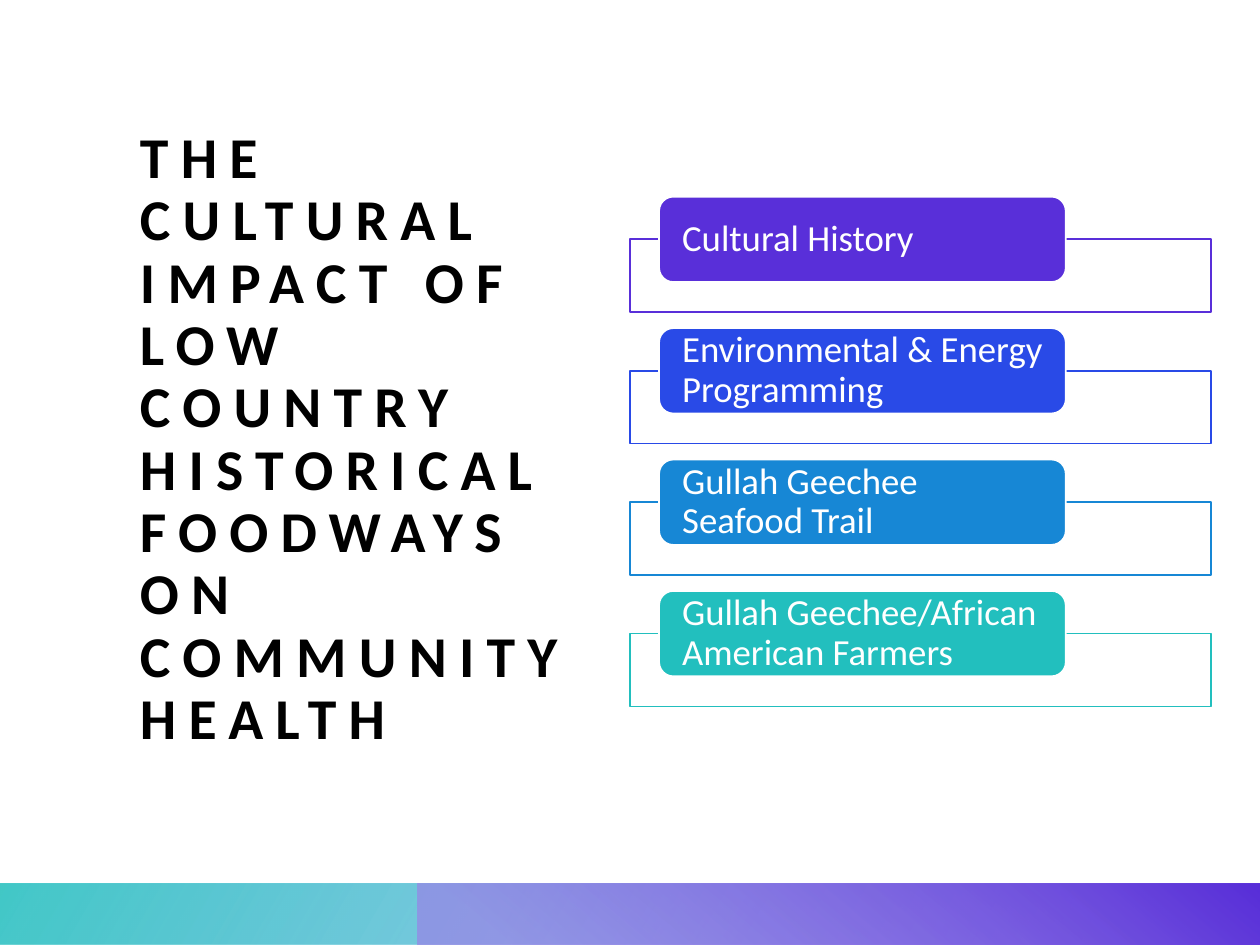
from lxml import etree
from pptx import Presentation
from pptx.dml.color import RGBColor
from pptx.enum import shapes, text
from pptx.oxml import ns
from pptx.util import Pt

BLACK = RGBColor(0x00, 0x00, 0x00)
WHITE = RGBColor(0xFF, 0xFF, 0xFF)
PURPLE = RGBColor(0x59, 0x2F, 0xD9)
LILAC = RGBColor(0x9B, 0x82, 0xE8)
INDIGO = RGBColor(0x29, 0x4A, 0xE7)
BLUE = RGBColor(0x17, 0x87, 0xD5)
TEAL = RGBColor(0x22, 0xBF, 0xBE)

FONT = "Calibri"
TITLE = "THE CULTURAL IMPACT OF LOW COUNTRY HISTORICAL FOODWAYS ON COMMUNITY HEALTH"
TOPICS = [
    ("Cultural History", PURPLE),
    ("Environmental & Energy Programming", INDIGO),
    ("Gullah Geechee Seafood Trail", BLUE),
    ("Gullah Geechee/African American Farmers", TEAL),
]
TOP, STEP = 112.4, 75.1  # first topic and distance between topics


def write(shape, words, size, color, bold=False, gap=0, inset=0,
          anchor=text.MSO_ANCHOR.MIDDLE):
    """Put one left-aligned paragraph in a shape."""
    frame = shape.text_frame
    frame.word_wrap = True
    frame.auto_size = text.MSO_AUTO_SIZE.NONE
    frame.vertical_anchor = anchor
    frame.margin_left = frame.margin_right = Pt(inset)
    frame.margin_top = frame.margin_bottom = 0
    para = frame.paragraphs[0]
    para.alignment = text.PP_ALIGN.LEFT
    para.line_spacing = 0.9
    run = para.add_run()
    run.text = words
    font = run.font
    font.name, font.size, font.bold = FONT, Pt(size), bold
    font.color.rgb = color
    if gap:  # letter spacing, in hundredths of a point
        font._element.set("spc", str(gap * 100))


def block(slide, kind, x, y, w, h, fill=None, line=None):
    """Add a preset shape with a plain fill and a 1 pt line."""
    shape = slide.shapes.add_shape(kind, Pt(x), Pt(y), Pt(w), Pt(h))
    shape.shadow.inherit = False
    if fill is None:
        shape.fill.background()
    else:
        shape.fill.solid()
        shape.fill.fore_color.rgb = fill
    if line is None:
        shape.line.fill.background()
    else:
        shape.line.color.rgb = line
        shape.line.width = Pt(1)
    return shape


def band(slide, x, w, stops, angle):
    """Add a footer band; stops are (position, colour, opacity) in percent."""
    shape = block(slide, shapes.MSO_SHAPE.RECTANGLE, x, 504.7, w, 35.3)
    grad = etree.Element(ns.qn("a:gradFill"), rotWithShape="1")
    group = etree.SubElement(grad, ns.qn("a:gsLst"))
    for pos, color, alpha in stops:
        stop = etree.SubElement(group, ns.qn("a:gs"), pos=str(pos * 1000))
        tone = etree.SubElement(stop, ns.qn("a:srgbClr"), val=str(color))
        etree.SubElement(tone, ns.qn("a:alpha"), val=str(alpha * 1000))
    etree.SubElement(grad, ns.qn("a:lin"), ang=str(angle * 60000), scaled="0")
    props = shape._element.spPr
    props.replace(props.find(ns.qn("a:noFill")), grad)


def topic(slide, y, words, color):
    """Add an outlined frame with a rounded label over its top edge."""
    block(slide, shapes.MSO_SHAPE.RECTANGLE, 360, y + 24.4, 332, 41.6,
          WHITE, color)
    label = block(slide, shapes.MSO_SHAPE.ROUNDED_RECTANGLE, 376.6, y,
                  232.4, 48.8, color, WHITE)
    write(label, words, 21, WHITE, inset=10.8)


def main():
    deck = Presentation()
    deck.slide_width, deck.slide_height = Pt(720), Pt(540)
    slide = deck.slides.add_slide(deck.slide_layouts[5])

    # Title
    title = slide.shapes.title
    title.left, title.top = Pt(80), Pt(73.4)
    title.width, title.height = Pt(271.4), Pt(359.3)
    write(title, TITLE, 33, BLACK, bold=True, gap=7,
          anchor=text.MSO_ANCHOR.TOP)

    # Footer bands
    band(slide, 0, 720, [(14, BLUE, 28), (100, TEAL, 85)], 210)
    band(slide, 238.3, 481.7, [(9, LILAC, 68), (99, PURPLE, 100)], 310)

    # Topics
    for i, (words, color) in enumerate(TOPICS):
        topic(slide, TOP + i * STEP, words, color)

    deck.save("out.pptx")


if __name__ == "__main__":
    main()
